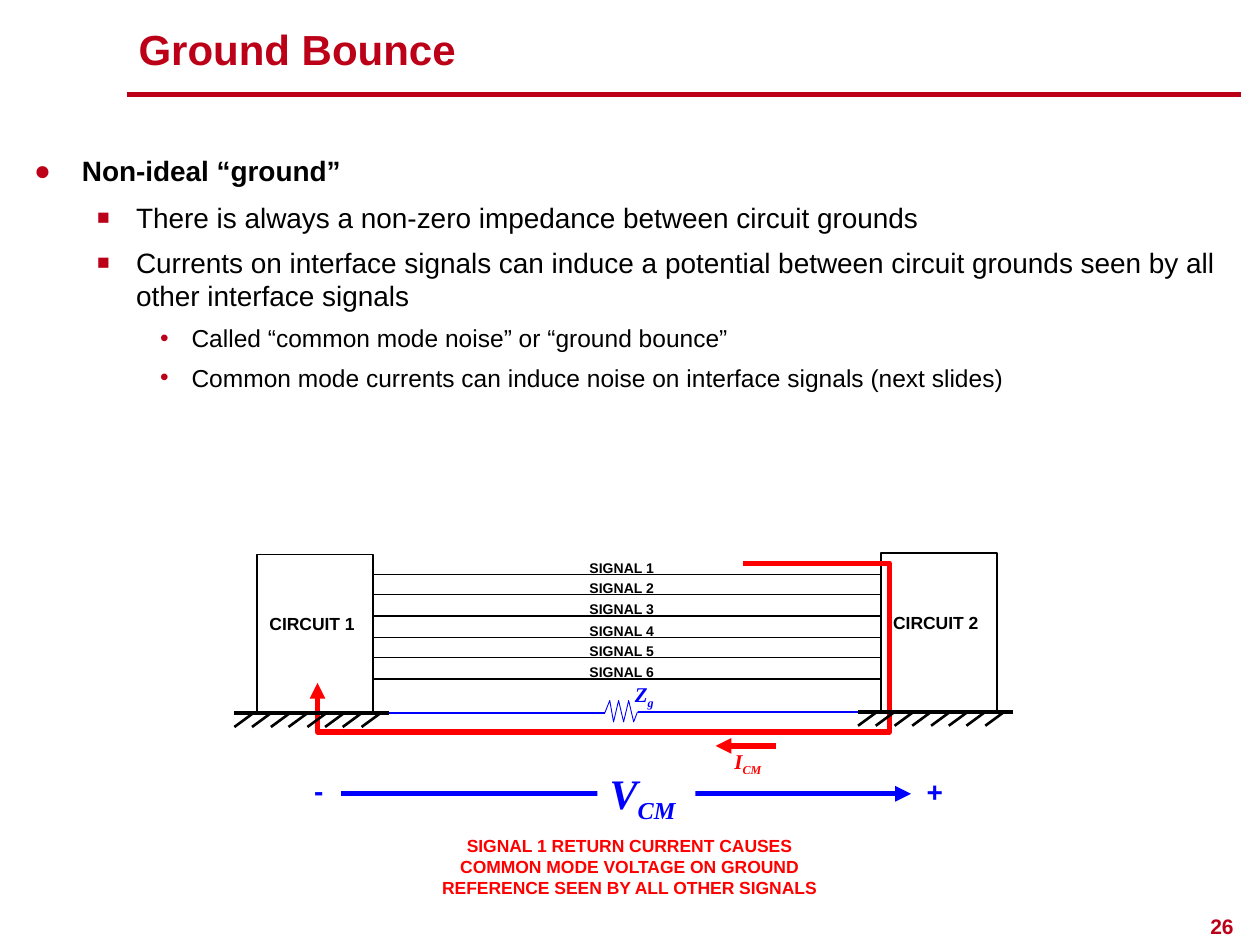
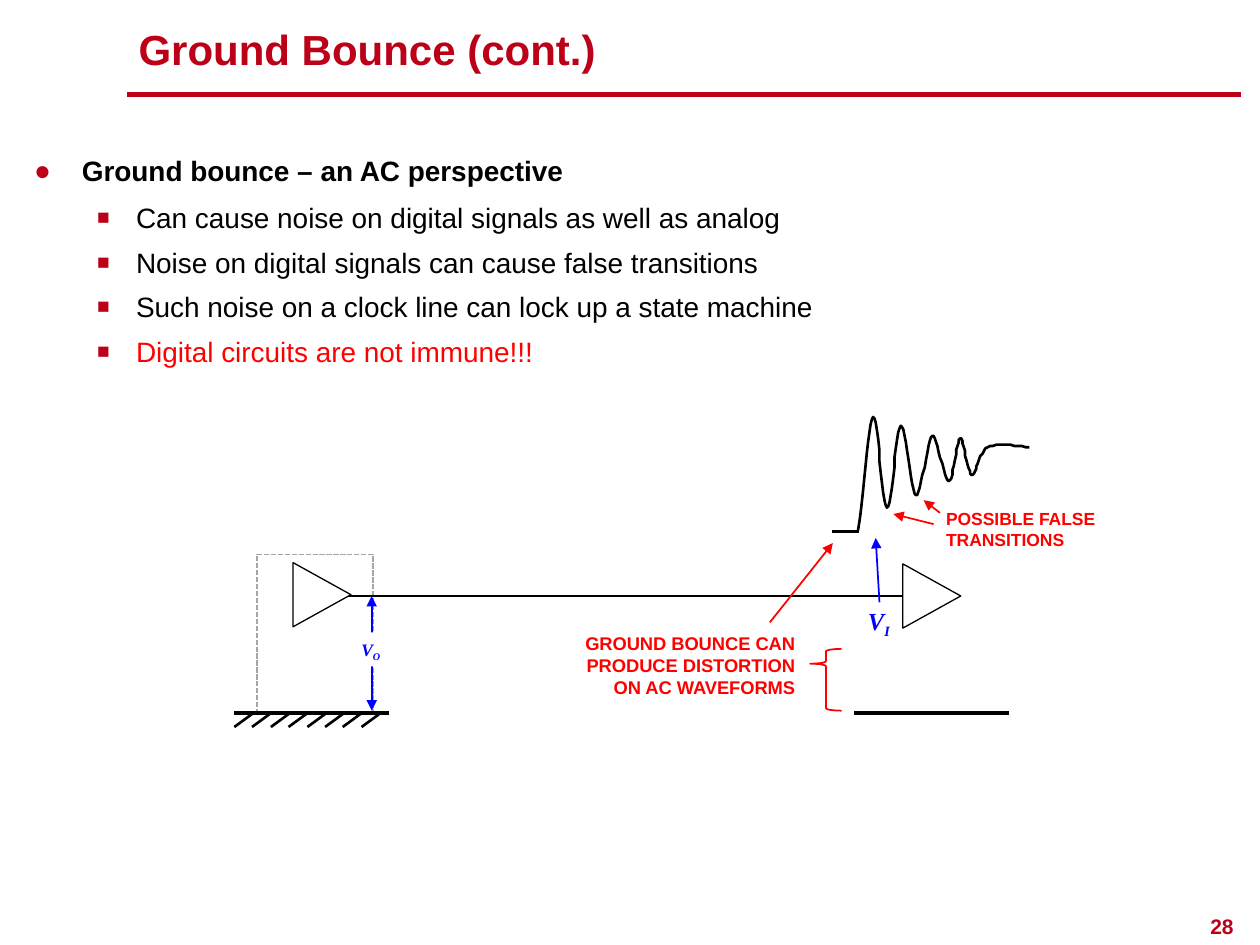
import pptx
import pptx.dml.color
import pptx.enum.dml
import pptx.enum.shapes
import pptx.enum.text
import pptx.oxml.ns
import pptx.util
from lxml import etree

PX = 9144  # EMU per px, 100 px to the inch
CRIMSON, RED, BLUE = "BB0018", "FF0000", "0000FF"
BLACK, WHITE, GREY = "000000", "FFFFFF", "A6A6A6"
rgb = pptx.dml.color.RGBColor.from_string
qn = pptx.oxml.ns.qn
Pt = pptx.util.Pt
ALIGN = pptx.enum.text.PP_ALIGN
SHAPE = pptx.enum.shapes.MSO_SHAPE


def add_path(shapes, points, colour, width, head=False, tail=False):
    """Draw a connector through two points, or an open outline through more."""
    if len(points) == 2:
        ends = [value * PX for point in points for value in point]
        path = shapes.add_connector(pptx.enum.shapes.MSO_CONNECTOR.STRAIGHT, *ends)
    else:
        builder = shapes.build_freeform(*points[0], scale=PX)
        builder.add_line_segments(points[1:], close=False)
        path = builder.convert_to_shape()
        path.fill.background()
    path.line.color.rgb = rgb(colour)
    path.line.width = Pt(width)
    properties = path._element.spPr
    for wanted, tag in ((head, "a:headEnd"), (tail, "a:tailEnd")):
        if wanted:
            etree.SubElement(properties.find(qn("a:ln")), qn(tag), type="triangle")
    etree.SubElement(properties, qn("a:effectLst"))


def add_label(slide, box, text, size, colour, subscript="", align=ALIGN.LEFT,
              wrap=False, fill=None):
    """Add bold text; a symbol with a subscript is set in italic Times."""
    label = slide.shapes.add_textbox(*[value * PX for value in box])
    label.text_frame.word_wrap = wrap
    if fill:
        label.fill.solid()
        label.fill.fore_color.rgb = rgb(fill)
    paragraph = label.text_frame.paragraphs[0]
    paragraph.alignment = align
    paragraph.add_run().text = text
    if subscript:
        run = paragraph.add_run()
        run.text = subscript
        run._r.get_or_add_rPr().set("baseline", "-25000")
    font = paragraph.font
    font.name = "Times New Roman" if subscript else "Arial"
    font.size, font.bold, font.italic = Pt(size), True, bool(subscript)
    font.color.rgb = rgb(colour)


presentation = pptx.Presentation()
presentation.slide_width, presentation.slide_height = 1000 * PX, 750 * PX

# Level: left margin, hanging indent, bullet, bullet percent, size, space after
LEVELS = [
    (38, 38, "●", 100, 16, 7.4),
    (81, 31, "■", 75, 16, 6.4),
    (125, 25, "•", 100, 14, 5.6),
]
CONTENT = [
    ("Ground Bounce", "26", [
        (0, "Non-ideal “ground”", BLACK),
        (1, "There is always a non-zero impedance between circuit grounds", BLACK),
        (1, "Currents on interface signals can induce a potential between circuit "
            "grounds seen by all other interface signals", BLACK),
        (2, "Called “common mode noise” or “ground bounce”", BLACK),
        (2, "Common mode currents can induce noise on interface signals (next slides)",
         BLACK),
    ]),
    ("Ground Bounce (cont.)", "28", [
        (0, "Ground bounce – an AC perspective", BLACK),
        (1, "Can cause noise on digital signals as well as analog", BLACK),
        (1, "Noise on digital signals can cause false transitions", BLACK),
        (1, "Such noise on a clock line can lock up a state machine", BLACK),
        (1, "Digital circuits are not immune!!!", RED),
    ]),
]

# Title, rule, page number and bullet list
for title_text, page, bullets in CONTENT:
    slide = presentation.slides.add_slide(presentation.slide_layouts[1])
    title, body = slide.shapes.title, slide.placeholders[1]
    for placeholder, box in ((title, (100, 17, 793, 44)), (body, (17, 117, 962, 269))):
        (placeholder.left, placeholder.top,
         placeholder.width, placeholder.height) = [value * PX for value in box]
        placeholder.text_frame.auto_size = pptx.enum.text.MSO_AUTO_SIZE.NONE
    title.text_frame.text = title_text
    title.text_frame.vertical_anchor = pptx.enum.text.MSO_ANCHOR.MIDDLE
    paragraph = title.text_frame.paragraphs[0]
    paragraph.alignment = ALIGN.LEFT
    paragraph.font.name, paragraph.font.size = "Arial", Pt(24)
    paragraph.font.bold = True
    paragraph.font.color.rgb = rgb(CRIMSON)

    add_path(slide.shapes, [(101, 75), (985, 75)], CRIMSON, 3)
    add_label(slide, (948, 720, 41, 28), page, 12, CRIMSON, align=ALIGN.RIGHT)

    body.text_frame.text = "\n".join(text for level, text, colour in bullets)
    for paragraph, (level, text, colour) in zip(body.text_frame.paragraphs, bullets):
        margin, hanging, bullet, percent, size, space = LEVELS[level]
        paragraph.level = level
        properties = paragraph._p.get_or_add_pPr()
        properties.set("marL", str(margin * PX))
        properties.set("indent", str(-hanging * PX))
        bullet_colour = etree.SubElement(properties, qn("a:buClr"))
        etree.SubElement(bullet_colour, qn("a:srgbClr"), val=CRIMSON)
        etree.SubElement(properties, qn("a:buSzPct"), val=str(percent * 1000))
        etree.SubElement(properties, qn("a:buFont"), typeface="Arial")
        etree.SubElement(properties, qn("a:buChar"), char=bullet)
        paragraph.space_before, paragraph.space_after = Pt(0), Pt(space)
        paragraph.font.name, paragraph.font.size = "Arial", Pt(size)
        paragraph.font.bold = level == 0
        paragraph.font.color.rgb = rgb(colour)

bounce, perspective = presentation.slides

# Wire between the two buffers runs behind them
add_path(perspective.shapes, [(266, 473), (734, 473)], BLACK, 0.75)

# Circuit boxes, buffers and brace
for slide, preset, box, rotation, colour, width in (
    (bounce, SHAPE.RECTANGLE, (204, 440, 92, 125), 0, BLACK, 1),
    (bounce, SHAPE.RECTANGLE, (699, 439, 92, 125), 0, BLACK, 1),
    (perspective, SHAPE.RECTANGLE, (204, 440, 92, 125), 0, GREY, 1),
    (perspective, SHAPE.ISOSCELES_TRIANGLE, (230, 449, 51, 46), 90, BLACK, 0.75),
    (perspective, SHAPE.ISOSCELES_TRIANGLE, (714, 450, 51, 46), 90, BLACK, 0.75),
    (perspective, SHAPE.LEFT_BRACE, (643, 515, 25, 49), 0, RED, 1),
):
    shape = slide.shapes.add_shape(preset, *[value * PX for value in box])
    shape.shadow.inherit = False
    shape.rotation = rotation
    shape.line.color.rgb = rgb(colour)
    shape.line.width = Pt(width)
    if preset == SHAPE.LEFT_BRACE:
        shape.fill.background()
        shape.adjustments[0], shape.adjustments[1] = 0.08, 0.24
    else:
        shape.fill.solid()
        shape.fill.fore_color.rgb = rgb(WHITE)
    if colour == GREY:
        shape.line.dash_style = pptx.enum.dml.MSO_LINE.SQUARE_DOT

# The dashed box lies behind the wire
wire = perspective.shapes[4]._element
dashed_box = perspective.shapes[5]._element
wire.addprevious(dashed_box)

# Signal lines
for index in range(6):
    signal_top = 456 + index * 50 // 3
    add_path(bounce.shapes, [(296, signal_top), (699, signal_top)], BLACK, 0.75)
    add_label(bounce, (458, signal_top - 17, 72, 24), f"SIGNAL {index + 1}", 8, BLACK)

# Ground impedance and common mode current
zigzag = [(480, 566), (484, 556), (487, 573), (491, 556),
          (495, 573), (499, 556), (503, 573), (506, 565)]
add_path(bounce.shapes, [(309, 566), zigzag[0]], BLUE, 1)
add_path(bounce.shapes, zigzag, BLUE, 0.5)
add_path(bounce.shapes, [zigzag[-1], (682, 565)], BLUE, 1)
return_path = [(590, 447), (706, 447), (706, 581), (252, 581), (252, 542)]
add_path(bounce.shapes, return_path, RED, 3, tail=True)
add_path(bounce.shapes, [(616, 592), (568, 592)], RED, 3, tail=True)
add_path(bounce.shapes, [(271, 630), (723, 630)], BLUE, 3, tail=True)

add_label(bounce, (204, 482, 89, 27), "CIRCUIT 1", 10, BLACK)
add_label(bounce, (699, 481, 89, 27), "CIRCUIT 2", 10, BLACK)
add_label(bounce, (494, 536, 37, 30), "Z", 12, BLUE, "g")
add_label(bounce, (573, 589, 44, 30), "I", 12, RED, "CM")
add_label(bounce, (474, 604, 78, 51), "V", 24, BLUE, "CM", fill=WHITE)
add_label(bounce, (239, 609, 28, 37), "-", 16, BLUE, align=ALIGN.CENTER)
add_label(bounce, (725, 610, 34, 37), "+", 16, BLUE, align=ALIGN.CENTER)
add_label(bounce, (331, 658, 337, 61),
          "SIGNAL 1 RETURN CURRENT CAUSES COMMON MODE VOLTAGE ON GROUND "
          "REFERENCE SEEN BY ALL OTHER SIGNALS", 10, RED, align=ALIGN.CENTER, wrap=True)

# Ringing waveform: Bezier segments sampled into short lines
RINGING = [
    [(684, 402), (689, 334), (693, 331)], [(697, 328), (700, 402), (704, 403)],
    [(708, 404), (711, 339), (715, 338)], [(719, 336), (723, 392), (727, 393)],
    [(731, 395), (736, 348), (740, 346)], [(744, 344), (749, 382), (753, 382)],
    [(757, 382), (759, 349), (762, 348)], [(765, 347), (768, 376), (771, 377)],
    [(775, 378), (777, 358), (784, 355)], [(792, 351), (805, 354), (817, 355)],
]
STEPS = 12
waveform = [(681, 421)]
for control_1, control_2, end in RINGING:
    start = waveform[-1]
    for step in range(1, STEPS + 1):
        t = step / STEPS
        weights = ((1 - t) ** 3, 3 * t * (1 - t) ** 2, 3 * t * t * (1 - t), t ** 3)
        waveform.append(tuple(
            sum(weight * value for weight, value in zip(weights, values))
            for values in zip(start, control_1, control_2, end)))
add_path(perspective.shapes, waveform, BLACK, 1.5)
add_path(perspective.shapes, [(660, 422), (682, 422)], BLACK, 1.5)

# Voltages, callouts and receiver ground
add_path(perspective.shapes, [(295, 473), (295, 564)], BLUE, 1, head=True, tail=True)
for start, end, colour in (
    ((698, 478), (695, 427), BLUE),
    ((741, 416), (709, 408), RED),
    ((746, 407), (733, 397), RED),
    ((611, 494), (661, 431), RED),
):
    add_path(perspective.shapes, [start, end], colour, 1, tail=True)
add_path(perspective.shapes, [(678, 566), (801, 566)], BLACK, 2.25)
add_label(perspective, (277, 502, 36, 27), "V", 10, BLUE, "O", fill=WHITE)
add_label(perspective, (679, 476, 46, 34), "V", 14, BLUE, "I", wrap=True)
add_label(perspective, (741, 398, 142, 44), "POSSIBLE FALSE TRANSITIONS", 10, RED,
          wrap=True)
add_label(perspective, (442, 497, 199, 63),
          "GROUND BOUNCE CAN PRODUCE DISTORTION ON AC WAVEFORMS", 10.5, RED,
          align=ALIGN.RIGHT, wrap=True)

# Hatched ground symbols
for slide, left, top in ((bounce, 186, 566), (bounce, 681, 565), (perspective, 186, 566)):
    ground = slide.shapes.add_group_shape()
    add_path(ground.shapes, [(left, top), (left + 123, top)], BLACK, 2.25)
    for index in range(8):
        foot = left + round(14.4 * index)
        add_path(ground.shapes, [(foot + 15, top), (foot, top + 11)], BLACK, 1.5)

presentation.save("out.pptx")
